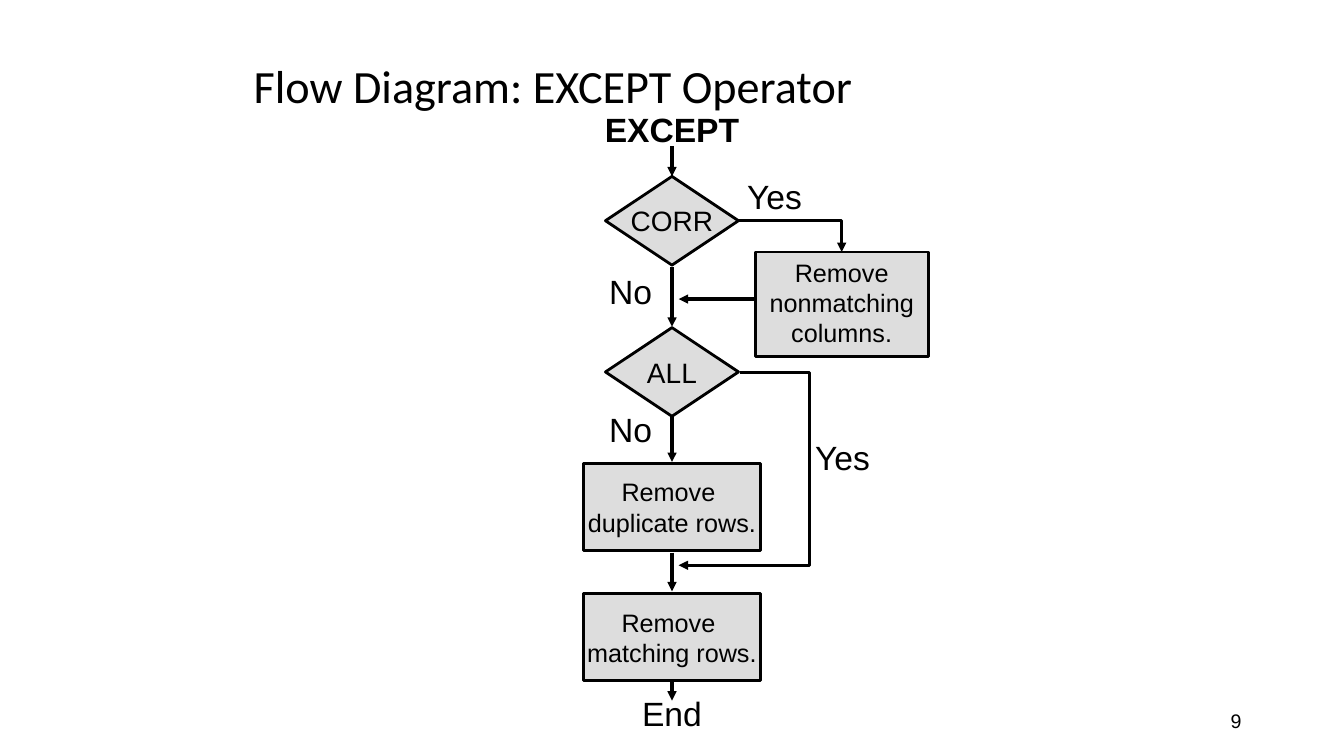
from dataclasses import dataclass

from lxml import etree
from pptx import Presentation
from pptx import util as u
from pptx.dml.color import RGBColor
from pptx.enum import shapes, text
from pptx.oxml.ns import qn

INK, GREY = "000000", "DDDDDD"
COLS, ROWS = 160, 90
AXIS = 80  # column of the main flow
SIDE = 100.2  # column of the side branch
NO = 75.06  # column of the "No" labels

deck = Presentation()
deck.slide_width, deck.slide_height = u.Inches(13.33), u.Inches(7.5)
slide = deck.slides.add_slide(deck.slide_layouts[5])


@dataclass
class Node:
    words: str
    mid: float
    top: float
    wide: float
    high: float
    size: int = 18
    kind: shapes.MSO_SHAPE = shapes.MSO_SHAPE.RECTANGLE
    inset: bool = True
    wrap: bool = False
    anchor: text.MSO_ANCHOR = text.MSO_ANCHOR.MIDDLE


@dataclass
class Label:
    words: str
    mid: float
    top: float
    wide: float
    high: float = 4.8
    bold: bool = False
    lead: float = 1.0


@dataclass
class Arrow:
    x1: float
    y1: float
    x2: float
    y2: float
    bend: str = ""
    adjust: int | None = None


def col(n: float) -> int:
    return round(deck.slide_width * n / COLS)


def row(n: float) -> int:
    return round(deck.slide_height * n / ROWS)


def tint(code: str) -> RGBColor:
    return RGBColor.from_string(code)


def write(frame, words: str, size: int, align=text.PP_ALIGN.CENTER,
          face: str = "Arial", bold: bool = False, lead: float = 1.0) -> None:
    para = frame.paragraphs[0]
    para.text = words
    para.alignment, para.line_spacing = align, lead
    font = para.font
    font.name, font.size, font.bold = face, u.Pt(size), bold
    font.color.rgb = tint(INK)


def strip(frame) -> None:
    frame.margin_left = frame.margin_right = 0
    frame.margin_top = frame.margin_bottom = 0


def place(mid: float, top: float, wide: float, high: float) -> tuple:
    return col(mid - wide / 2), row(top), col(wide), row(high)


def draw_node(node: Node) -> None:
    box = slide.shapes.add_shape(
        node.kind, *place(node.mid, node.top, node.wide, node.high))
    box.shadow.inherit = False
    box.fill.solid()
    box.fill.fore_color.rgb = tint(GREY)
    box.line.color.rgb, box.line.width = tint(INK), u.Pt(2)
    frame = box.text_frame
    frame.word_wrap, frame.vertical_anchor = node.wrap, node.anchor
    if not node.inset:
        strip(frame)
    write(frame, node.words, node.size)


def draw_label(label: Label) -> None:
    box = slide.shapes.add_textbox(
        *place(label.mid, label.top, label.wide, label.high))
    frame = box.text_frame
    frame.word_wrap = False
    frame.auto_size = text.MSO_AUTO_SIZE.SHAPE_TO_FIT_TEXT
    strip(frame)
    write(frame, label.words, 24, bold=label.bold, lead=label.lead)


def draw_arrow(arrow: Arrow) -> None:
    kind = shapes.MSO_CONNECTOR.ELBOW if arrow.bend else shapes.MSO_CONNECTOR.STRAIGHT
    link = slide.shapes.add_connector(
        kind, col(arrow.x1), row(arrow.y1), col(arrow.x2), row(arrow.y2))
    link.line.color.rgb, link.line.width = tint(INK), u.Pt(2.25)
    props = link._element.spPr
    etree.SubElement(props.find(qn("a:ln")), qn("a:tailEnd"), type="triangle")
    etree.SubElement(props, qn("a:effectLst"))
    if arrow.bend:
        geom = props.find(qn("a:prstGeom"))
        geom.set("prst", arrow.bend)
        if arrow.adjust is not None:
            etree.SubElement(geom.find(qn("a:avLst")), qn("a:gd"),
                             name="adj1", fmla=f"val {arrow.adjust}")


# Title
title = slide.shapes.title
title.left, title.top, title.width, title.height = col(29), row(6), col(106), row(9)
title.text_frame.auto_size = text.MSO_AUTO_SIZE.NONE
title.text_frame.vertical_anchor = text.MSO_ANCHOR.MIDDLE
write(title.text_frame, "Flow Diagram: EXCEPT Operator", 33,
      text.PP_ALIGN.LEFT, "Calibri", lead=0.9)

# Page number
page = slide.shapes.add_textbox(col(113), row(83.4), col(36), row(4.8)).text_frame
page.word_wrap, page.vertical_anchor = True, text.MSO_ANCHOR.MIDDLE
write(page, "9", 14, text.PP_ALIGN.RIGHT)

# Decisions and steps
for words, top in (("CORR", 21), ("ALL", 39)):
    draw_node(Node(words, AXIS, top, 15.84, 10.56, 20,
                   shapes.MSO_SHAPE.FLOWCHART_DECISION, inset=False))
for words, top in (("Remove \nduplicate rows.", 55.2), ("Remove \nmatching rows.", 70.7)):
    draw_node(Node(words, AXIS, top, 21, 10.3))
draw_node(Node("Remove nonmatching\ncolumns.", SIDE, 30, 20.6, 12.4,
               wrap=True, anchor=text.MSO_ANCHOR.TOP))

# Labels
for label in (
    Label("EXCEPT", AXIS, 13, 16.2, bold=True),
    Label("No", NO, 32.3, 5.2),
    Label("No", NO, 48.7, 5.2),
    Label("Yes", 92.2, 20.9, 6.6),
    Label("Yes", 100.3, 52, 6.6),
    Label("End", AXIS, 83.4, 7.2, 3.8, lead=0.8),
):
    draw_label(label)

# Arrows down the main flow
for start, end in ((17.4, 21), (31.8, 38.9), (49.7, 55), (65.8, 70.4), (81, 83.4)):
    draw_arrow(Arrow(AXIS, start, AXIS, end))

# Arrows of the side branches
for arrow in (
    Arrow(88, 26.3, SIDE, 30, "bentConnector2"),
    Arrow(89.8, 35.6, 80.8, 35.6),
    Arrow(88.1, 44.3, 80.8, 67.3, "bentConnector3", -112700),
):
    draw_arrow(arrow)

deck.save("out.pptx")
